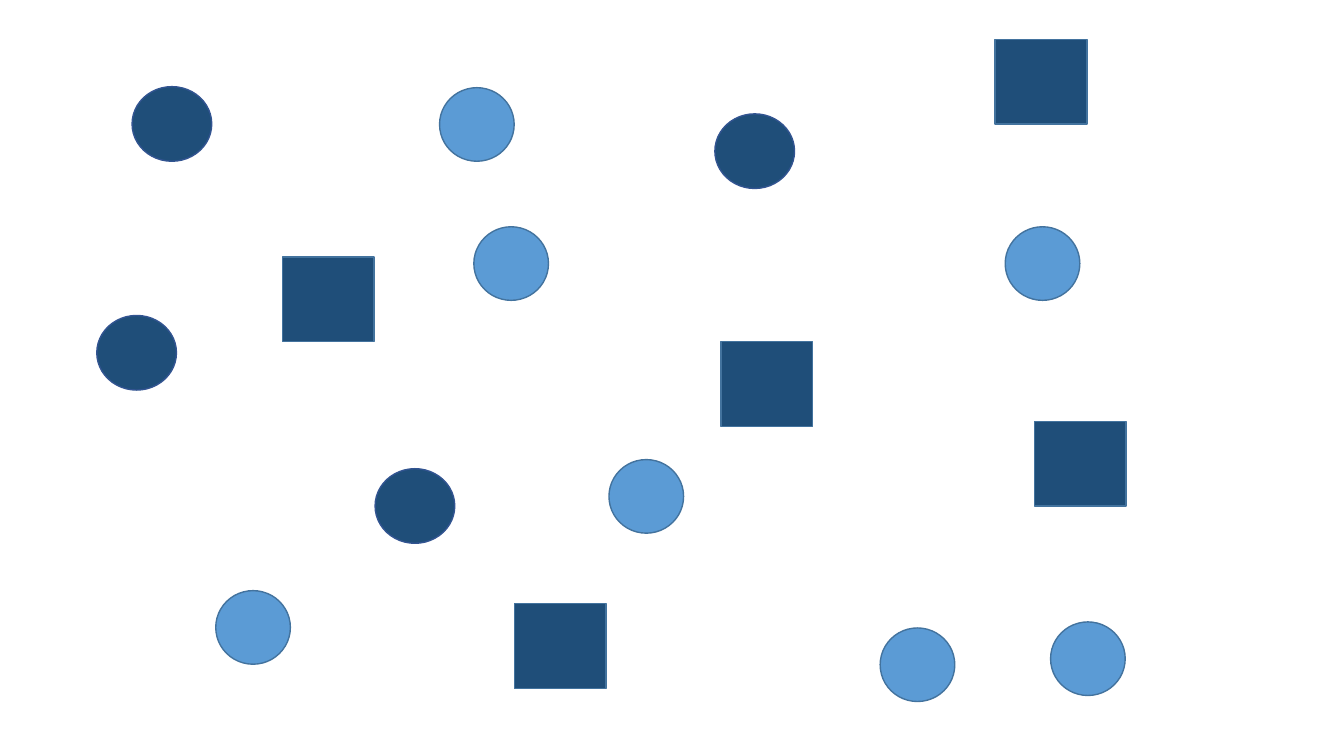
import pptx
import pptx.dml.color
import pptx.enum.shapes
import pptx.util
from dataclasses import dataclass

SLIDE_WIDTH, SLIDE_HEIGHT = 13.33, 7.5
OVAL = pptx.enum.shapes.MSO_SHAPE.OVAL
RECTANGLE = pptx.enum.shapes.MSO_SHAPE.RECTANGLE


@dataclass
class Marker:
    """One kind of scattered shape, sized in inches."""
    outline: int
    width: float
    height: float
    fill: str
    line: str


LIGHT_CIRCLE = Marker(OVAL, 0.74, 0.73, "5B9BD5", "43739E")
DARK_CIRCLE = Marker(OVAL, 0.79, 0.74, "1F4E79", "325491")
DARK_SQUARE = Marker(RECTANGLE, 0.91, 0.84, "1F4E79", "43739E")

# Left and top of each marker within the scatter box, back to front
SCATTER = [
    (LIGHT_CIRCLE, [(8.73, 6.23), (9.97, 2.25), (6.04, 4.56), (10.42, 6.17)]),
    (DARK_CIRCLE, [(0.96, 3.13), (7.09, 1.13), (3.72, 4.65)]),
    (DARK_SQUARE, [(5.1, 5.99), (9.87, 0.39)]),
    (LIGHT_CIRCLE, [(2.14, 5.86), (4.36, 0.87)]),
    (DARK_CIRCLE, [(1.31, 0.86)]),
    (DARK_SQUARE, [(10.26, 4.18), (7.15, 3.39), (2.8, 2.55)]),
    (LIGHT_CIRCLE, [(4.7, 2.25)]),
]


def paint(color_format, hex_color):
    color_format.rgb = pptx.dml.color.RGBColor.from_string(hex_color)


def add_marker(page, marker, left, top):
    lengths = (left, top, marker.width, marker.height)
    shape = page.shapes.add_shape(marker.outline, *map(pptx.util.Inches, lengths))
    shape.shadow.inherit = False
    shape.fill.solid()
    paint(shape.fill.fore_color, marker.fill)
    paint(shape.line.color, marker.line)
    shape.line.width = pptx.util.Pt(1)


def add_scatter(page, box):
    """Place all markers, scaled to the box (left, top, width, height)."""
    left, top, width, height = box
    for marker, places in SCATTER:
        for across, down in places:
            add_marker(page, marker,
                       left + across / SLIDE_WIDTH * width,
                       top + down / SLIDE_HEIGHT * height)


def main():
    deck = pptx.Presentation()
    deck.slide_width = pptx.util.Inches(SLIDE_WIDTH)
    deck.slide_height = pptx.util.Inches(SLIDE_HEIGHT)
    page = deck.slides.add_slide(deck.slide_layouts[6])
    add_scatter(page, (0, 0, SLIDE_WIDTH, SLIDE_HEIGHT))
    deck.save("out.pptx")


if __name__ == "__main__":
    main()
